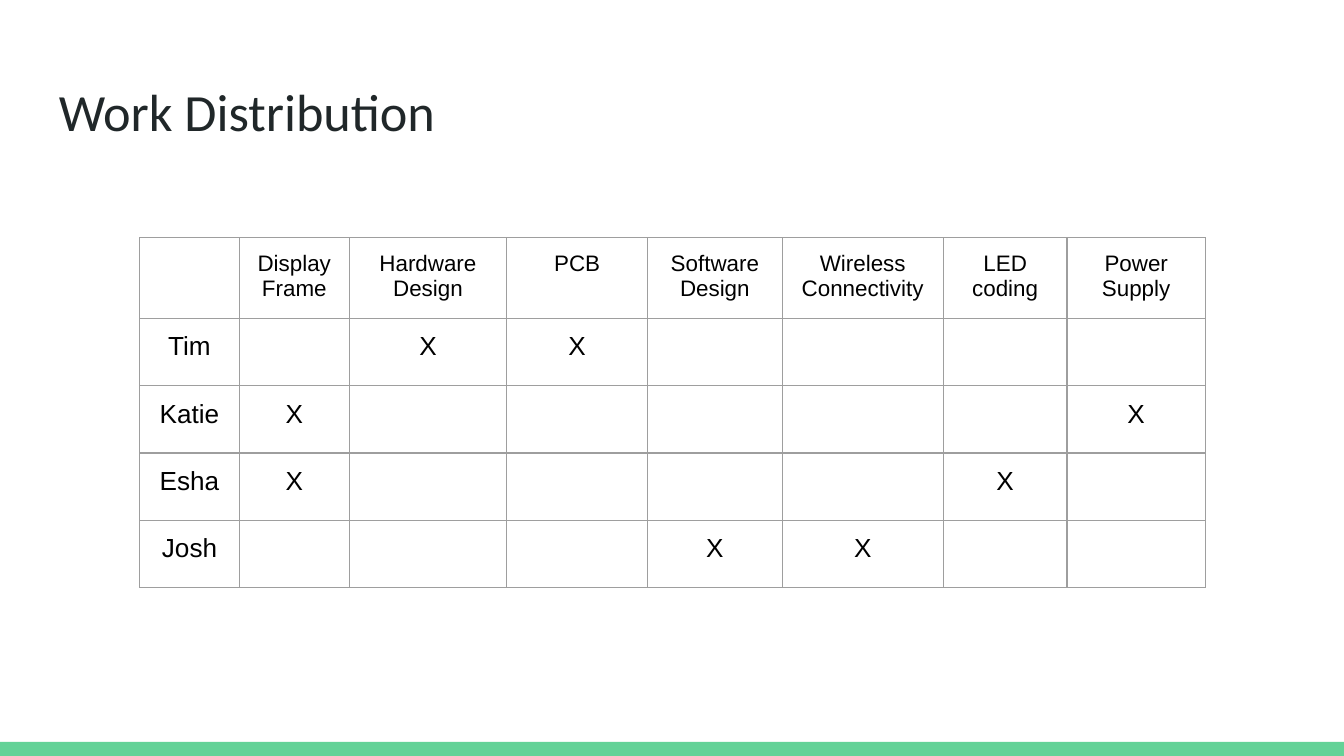
from dataclasses import dataclass

from lxml import etree
from pptx import Presentation
from pptx.dml.color import RGBColor
from pptx.enum.shapes import MSO_SHAPE
from pptx.enum.text import MSO_ANCHOR, PP_ALIGN
from pptx.oxml.ns import qn
from pptx.util import Inches, Pt

RECTANGLE = MSO_SHAPE.RECTANGLE
TOP = MSO_ANCHOR.TOP
LEFT, CENTER = PP_ALIGN.LEFT, PP_ALIGN.CENTER

TASKS = ["Display Frame", "Hardware Design", "PCB", "Software Design",
         "Wireless Connectivity", "LED coding", "Power Supply"]
ASSIGNMENTS = {
    "Tim": {"Hardware Design", "PCB"},
    "Katie": {"Display Frame", "Power Supply"},
    "Esha": {"Display Frame", "LED coding"},
    "Josh": {"Software Design", "Wireless Connectivity"},
}
COLUMN_WIDTHS = [0.74, 0.82, 1.17, 1.05, 1, 1.2, 0.92, 1.03]
ROW_HEIGHT = 0.42


@dataclass(frozen=True)
class Theme:
    title_color: str = "202729"
    text_color: str = "000000"
    accent: str = "63D297"
    grid_color: str = "9E9E9E"
    grid_width: float = 0.75
    title_font: str = "Calibri"
    body_font: str = "Arial"
    title_size: int = 28
    header_size: int = 12
    body_size: int = 14
    inset: float = 0.1


def write_text(frame, text, *, font, size, color, align=LEFT):
    paragraph = frame.paragraphs[0]
    paragraph.alignment = align
    run = paragraph.add_run()
    run.text = text
    run.font.name = font
    run.font.size = Pt(size)
    run.font.bold = False
    run.font.color.rgb = RGBColor.from_string(color)


class SlideBuilder:
    """Draws themed elements on one slide."""

    def __init__(self, slide, theme):
        self.slide = slide
        self.theme = theme

    def set_insets(self, holder):
        holder.margin_left = holder.margin_right = Inches(self.theme.inset)
        holder.margin_top = holder.margin_bottom = Inches(self.theme.inset)
        holder.vertical_anchor = TOP

    def bar(self, *box):
        bar = self.slide.shapes.add_shape(RECTANGLE, *map(Inches, box))
        bar.shadow.inherit = False
        bar.fill.solid()
        bar.fill.fore_color.rgb = RGBColor.from_string(self.theme.accent)
        bar.line.fill.background()

    def title(self, text, *box):
        frame = self.slide.shapes.add_textbox(*map(Inches, box)).text_frame
        frame.word_wrap = True
        self.set_insets(frame)
        write_text(frame, text, font=self.theme.title_font,
                   size=self.theme.title_size, color=self.theme.title_color)

    def border(self, cell):
        properties = cell._tc.get_or_add_tcPr()
        for position, side in enumerate(("a:lnL", "a:lnR", "a:lnT", "a:lnB")):
            line = etree.Element(qn(side), w=str(Pt(self.theme.grid_width)))
            fill = etree.SubElement(line, qn("a:solidFill"))
            etree.SubElement(fill, qn("a:srgbClr"), val=self.theme.grid_color)
            properties.insert(position, line)

    def table(self, rows, left, top, widths, row_height):
        table = self.slide.shapes.add_table(
            len(rows), len(widths), Inches(left), Inches(top),
            Inches(sum(widths)), Inches(row_height * len(rows))).table
        table.first_row = table.horz_banding = False
        for column, width in zip(table.columns, widths):
            column.width = Inches(width)
        for row_index, row in enumerate(rows):
            table.rows[row_index].height = Inches(row_height)
            size = self.theme.body_size if row_index else self.theme.header_size
            for column_index, text in enumerate(row):
                cell = table.cell(row_index, column_index)
                cell.fill.background()
                self.set_insets(cell)
                self.border(cell)
                if text:
                    write_text(cell.text_frame, text, font=self.theme.body_font,
                               size=size, color=self.theme.text_color, align=CENTER)


def main():
    deck = Presentation()
    deck.slide_width = Inches(10)
    deck.slide_height = deck.slide_width * 9 // 16
    builder = SlideBuilder(deck.slides.add_slide(deck.slide_layouts[6]), Theme())

    builder.bar(0, 5.52, 10, 0.11)
    builder.title("Work Distribution", 0.34, 0.49, 9.32, 0.63)
    matrix = [["", *TASKS]]
    for member, assigned in ASSIGNMENTS.items():
        matrix.append([member, *("X" if task in assigned else "" for task in TASKS)])
    builder.table(matrix, 1.04, 1.77, COLUMN_WIDTHS, ROW_HEIGHT)

    deck.save("out.pptx")


if __name__ == "__main__":
    main()
